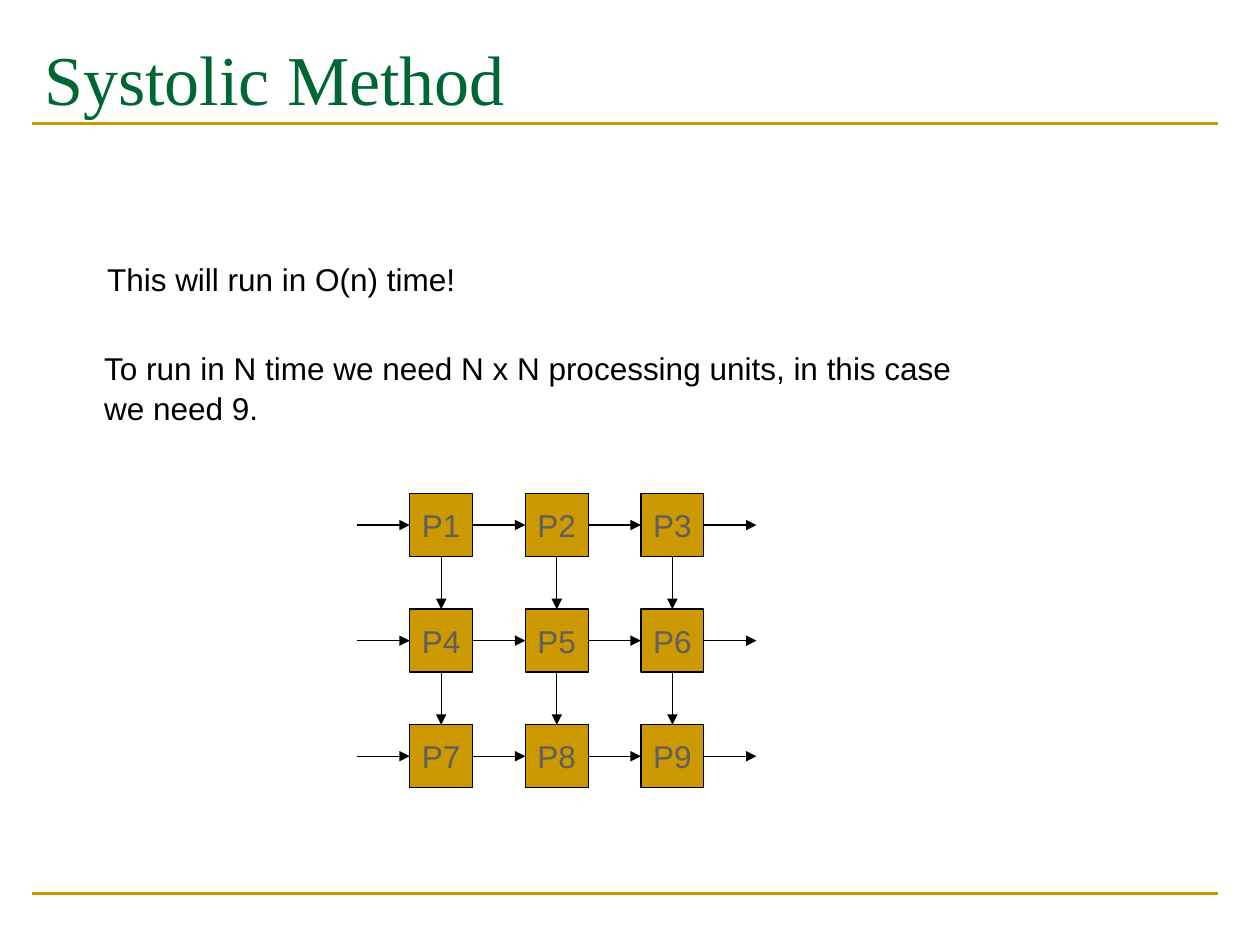
from lxml import etree
from pptx import Presentation
from pptx import util as u
from pptx.dml.color import RGBColor
from pptx.enum import shapes, text
from pptx.oxml.ns import qn

COLORS = {"title": "006633", "gold": "CC9900", "ink": "000000", "label": "5F5F5F"}


def add_text(paragraph, words, size, font, color):
    run = paragraph.add_run()
    run.text = words
    run.font.size = u.Pt(size)
    run.font.name = font
    run.font.color.rgb = RGBColor.from_string(COLORS[color])


def add_line(start, end, color, width, arrow=False):
    line = slide.shapes.add_connector(
        shapes.MSO_CONNECTOR.STRAIGHT, *(u.Cm(value) for value in start + end)
    )
    line.line.color.rgb = RGBColor.from_string(COLORS[color])
    line.line.width = u.Pt(width)
    if arrow:
        etree.SubElement(line.line._get_or_add_ln(), qn("a:tailEnd"), type="triangle")
    etree.SubElement(line._element.spPr, qn("a:effectLst"))
    return line


presentation = Presentation()
presentation.slide_width = u.Cm(25.4)
presentation.slide_height = u.Cm(19.05)
slide = presentation.slides.add_slide(presentation.slide_layouts[5])

for y in (18.01, 2.49):
    add_line((0.64, y), (24.56, y), "gold", 1.5)

title = slide.shapes.title
title.left, title.top, title.width, title.height = u.Cm(0.64), u.Cm(0.43), u.Cm(23.93), u.Cm(2.97)
frame = title.text_frame
frame.auto_size = text.MSO_AUTO_SIZE.NONE
frame.vertical_anchor = text.MSO_ANCHOR.TOP
frame.margin_top = u.Cm(0.28)
frame.paragraphs[0].alignment = text.PP_ALIGN.LEFT
add_text(frame.paragraphs[0], "Systolic Method", 40, "Times New Roman", "title")

notes = [
    (1.91, 5.08, 9.55, 1.27, ["This will run in O(n) time!"]),
    (1.85, 6.88, 21.36, 2.29,
     ["To run in N time we need N x N processing units, in this case", "we need 9."]),
]
for left, top, width, height, lines in notes:
    box = slide.shapes.add_textbox(u.Cm(left), u.Cm(top), u.Cm(width), u.Cm(height))
    frame = box.text_frame
    frame.word_wrap = True
    for index, words in enumerate(lines):
        paragraph = frame.add_paragraph() if index else frame.paragraphs[0]
        paragraph.line_spacing = 1.05
        add_text(paragraph, words, 18, "Arial", "ink")

COUNT = 3
LEFT, TOP = 8.26, 9.95
SIDE, GAP = 1.27, 1.06
PITCH = SIDE + GAP

units = {}
for row in range(COUNT):
    for column in range(COUNT):
        square = slide.shapes.add_shape(
            shapes.MSO_SHAPE.RECTANGLE,
            u.Cm(LEFT + column * PITCH), u.Cm(TOP + row * PITCH), u.Cm(SIDE), u.Cm(SIDE),
        )
        square.shadow.inherit = False
        square.fill.solid()
        square.fill.fore_color.rgb = RGBColor.from_string(COLORS["gold"])
        square.line.color.rgb = RGBColor.from_string(COLORS["ink"])
        square.line.width = u.Pt(0.75)
        frame = square.text_frame
        frame.word_wrap = False
        frame.vertical_anchor = text.MSO_ANCHOR.MIDDLE
        frame.paragraphs[0].alignment = text.PP_ALIGN.CENTER
        add_text(frame.paragraphs[0], f"P{row * COUNT + column + 1}", 18, "Arial", "label")
        units[row, column] = square

for row in range(COUNT):
    y = TOP + row * PITCH + SIDE / 2
    for column in range(COUNT + 1):
        x = LEFT + column * PITCH
        arrow = add_line((x - GAP, y), (x, y), "ink", 0.75, arrow=True)
        if column > 0:
            arrow.begin_connect(units[row, column - 1], 3)
        if column < COUNT:
            arrow.end_connect(units[row, column], 1)

for row in range(1, COUNT):
    y = TOP + row * PITCH
    for column in range(COUNT):
        x = LEFT + column * PITCH + SIDE / 2
        arrow = add_line((x, y - GAP), (x, y), "ink", 0.75, arrow=True)
        arrow.begin_connect(units[row - 1, column], 2)
        arrow.end_connect(units[row, column], 0)

presentation.save("out.pptx")
